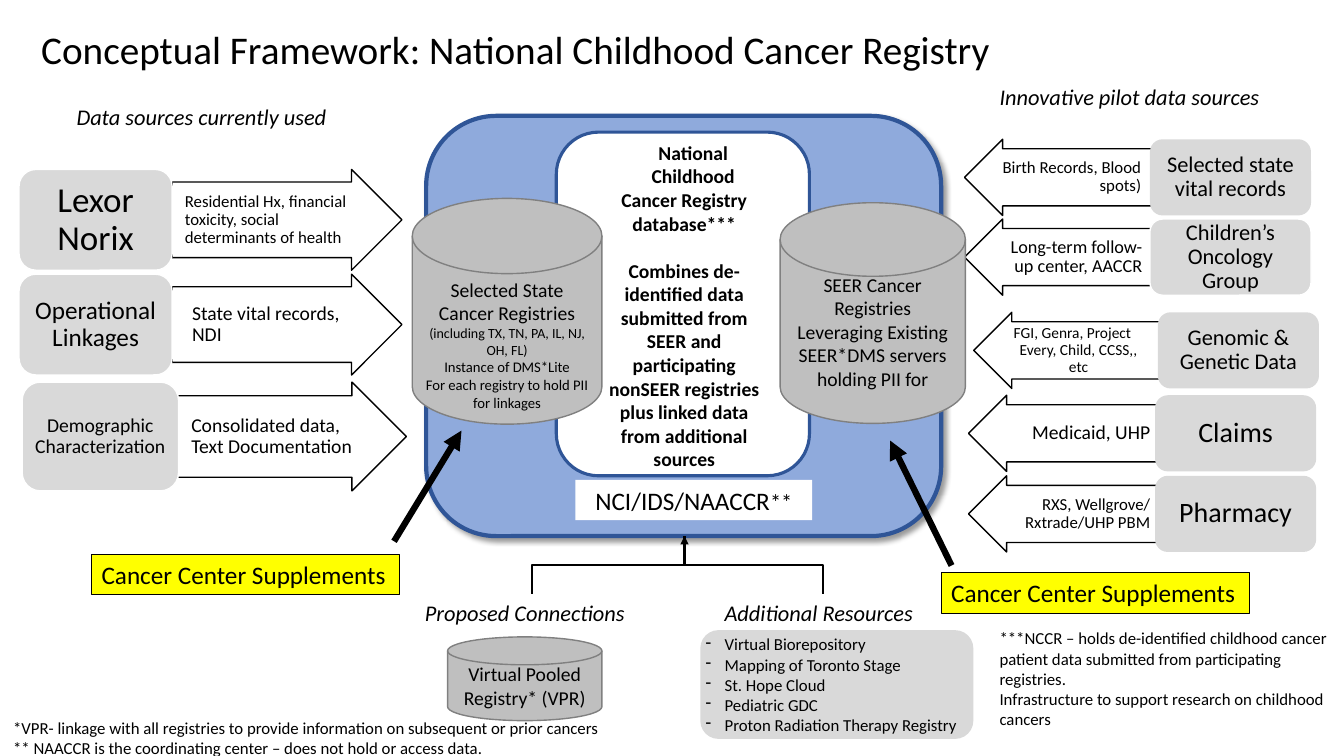
import lxml.etree
import pptx
import pptx.dml.color
import pptx.enum.shapes
import pptx.enum.text
import pptx.oxml.ns
import pptx.util

Cm, Pt = pptx.util.Cm, pptx.util.Pt
RGBColor = pptx.dml.color.RGBColor
SHAPE = pptx.enum.shapes.MSO_SHAPE
CONNECTOR = pptx.enum.shapes.MSO_CONNECTOR
ALIGN = pptx.enum.text.PP_ALIGN
ANCHOR = pptx.enum.text.MSO_ANCHOR
qn = pptx.oxml.ns.qn

BLACK = RGBColor(0x00, 0x00, 0x00)
WHITE = RGBColor(0xFF, 0xFF, 0xFF)
LIGHT_GREY = RGBColor(0xD9, 0xD9, 0xD9)
DISK_GREY = RGBColor(0xBF, 0xBF, 0xBF)
EDGE_GREY = RGBColor(0x80, 0x80, 0x80)
HUB_BLUE = RGBColor(0x8F, 0xAA, 0xDC)
EDGE_BLUE = RGBColor(0x2F, 0x55, 0x97)
YELLOW = RGBColor(0xFF, 0xFF, 0x00)

INSETS = (0.25, 0.13, 0.25, 0.13)

# Current sources: box left, box width, top, height, name, size, insets,
# arrow left, arrow width, detail, size, indent
CURRENT_SOURCES = [
    (0.48, 3.86, 4.27, 2.54, "Lexor Norix", 25, (0.35, 0.23), 4.34, 5.79,
     "Residential Hx, financial toxicity, social determinants of health", 12, 0.3),
    (0.48, 3.86, 6.91, 2.54, "Operational Linkages", 18, (0.28, 0.2), 4.34, 5.79,
     "State vital records, NDI", 14, 0.48),
    (0.56, 3.94, 9.63, 2.74, "Demographic Characterization", 14, (0.12, 0.12), 4.32, 5.92,
     "Consolidated data, Text Documentation", 14, 0.48),
]

# Pilot sources: box left, top, name, size, insets, box edge,
# arrow left, arrow width, detail, size, right inset, alignment
PILOT_SOURCES = [
    (28.98, 3.51, "Selected state vital records", 16, (0.28, 0.18), None,
     24.31, 4.7, "Birth Records, Blood spots)", 12, 0.25, ALIGN.RIGHT),
    (28.98, 5.52, "Children’s Oncology Group", 16, (0.28, 0.18), WHITE,
     24.31, 4.98, "Long-term follow-up center, AACCR", 13, 0.51, ALIGN.RIGHT),
    (29.18, 7.87, "Genomic & Genetic Data", 16, (0.1, 0.1), None,
     24.54, 5.26, "FGI, Genra, Project Every, Child, CCSS,, etc", 11, 1.02, ALIGN.CENTER),
    (29.11, 9.96, "Claims", 20, (0.1, 0.1), None,
     24.41, 6.1, "Medicaid, UHP", 14, 1.52, ALIGN.RIGHT),
    (29.11, 11.99, "Pharmacy", 20, (0.1, 0.1), None,
     24.41, 6.1, "RXS, Wellgrove/ Rxtrade/UHP PBM", 12, 1.52, ALIGN.RIGHT),
]
PILOT_WIDTH, PILOT_HEIGHT = 4.06, 1.92


def write(shape, lines, size, align=ALIGN.LEFT, anchor=ANCHOR.TOP, insets=INSETS,
          wrap=True, spacing=None, bold=None, italic=None):
    """Fill a shape with paragraphs; a line is a text or a (text, size) pair."""
    frame = shape.text_frame
    frame.word_wrap = wrap
    frame.vertical_anchor = anchor
    frame.margin_left, frame.margin_top, frame.margin_right, frame.margin_bottom = map(Cm, insets)
    for index, line in enumerate(lines):
        text, line_size = (line, size) if isinstance(line, str) else line
        paragraph = frame.paragraphs[0] if index == 0 else frame.add_paragraph()
        paragraph.add_run().text = text
        paragraph.alignment = align
        paragraph.line_spacing = spacing
        font = paragraph.font
        font.name, font.size, font.bold, font.italic = "Calibri", Pt(line_size), bold, italic
        font.color.rgb = BLACK
    return frame.paragraphs


def indent(paragraph, margin, first=0.0):
    properties = paragraph._p.get_or_add_pPr()
    properties.set("marL", str(Cm(margin)))
    properties.set("indent", str(Cm(first)))
    return properties


def add_panel(slide, kind, box, fill, edge=None, edge_width=1):
    panel = slide.shapes.add_shape(kind, *map(Cm, box))
    panel.shadow.inherit = False
    panel.fill.solid()
    panel.fill.fore_color.rgb = fill
    if edge is None:
        panel.line.fill.background()
    else:
        panel.line.color.rgb = edge
        panel.line.width = Pt(edge_width)
    return panel


def add_text(slide, box, lines, size, **style):
    return write(slide.shapes.add_textbox(*map(Cm, box)), lines, size, **style)


def add_disk(slide, box, lines, size, insets=INSETS):
    disk = add_panel(slide, SHAPE.FLOWCHART_MAGNETIC_DISK, box, DISK_GREY, EDGE_GREY)
    write(disk, lines, size, ALIGN.CENTER, ANCHOR.MIDDLE, insets)


def add_source_box(slide, box, name, size, insets, edge):
    source = add_panel(slide, SHAPE.ROUNDED_RECTANGLE, box, LIGHT_GREY, edge)
    write(source, [name], size, ALIGN.CENTER, ANCHOR.MIDDLE, insets * 2, spacing=0.9)


def add_block_arrow(slide, box, detail, size, align, right_inset, margin, first, to_left):
    left, top, width, height = box
    arrow = add_panel(slide, SHAPE.RIGHT_ARROW, box, WHITE, BLACK)
    arrow.adjustments[0], arrow.adjustments[1] = 0.75, 0.5
    head = 0.375 * height
    if to_left:
        arrow.element.spPr.find(qn("a:xfrm")).set("flipH", "1")
        left += head
    [paragraph] = add_text(slide, (left, top + height / 8, width - head, height * 0.75), [detail],
                           size, align=align, anchor=ANCHOR.MIDDLE,
                           insets=(0.02, 0.02, right_inset, 0.02), spacing=0.9)
    indent(paragraph, margin, first)


def add_line(slide, kind, start, end, width, arrowhead=None):
    line = slide.shapes.add_connector(kind, *map(Cm, start + end))
    line.line.color.rgb = BLACK
    line.line.width = Pt(width)
    if arrowhead:
        lxml.etree.SubElement(line.line._get_or_add_ln(), qn("a:" + arrowhead), type="triangle")
    lxml.etree.SubElement(line.element.spPr, qn("a:effectLst"))
    return line


def add_branch(slide, start, end, arrowhead=None):
    """Elbow that leaves and arrives vertically: a horizontal one, turned."""
    (x1, y1), (x2, y2) = start, end
    middle_x, middle_y = (x1 + x2) / 2, (y1 + y2) / 2
    half_w, half_h = abs(y2 - y1) / 2, abs(x2 - x1) / 2
    branch = add_line(slide, CONNECTOR.ELBOW, (middle_x - half_w, middle_y - half_h),
                      (middle_x + half_w, middle_y + half_h), 1.5, arrowhead)
    frame = branch.element.spPr.find(qn("a:xfrm"))
    frame.set("rot", str((270 if x2 > x1 else 90) * 60000))
    if x2 > x1:
        frame.set("flipH", "1")


def add_hub(slide):
    hub = add_panel(slide, SHAPE.ROUNDED_RECTANGLE, (10.74, 2.92, 12.98, 10.59),
                    HUB_BLUE, EDGE_BLUE, 3)
    effects = hub.element.spPr.find(qn("a:effectLst"))
    shadow = lxml.etree.SubElement(effects, qn("a:outerShdw"), blurRad=str(Pt(4)),
                                   dist=str(Pt(3)), dir=str(45 * 60000), algn="tl")
    tint = lxml.etree.SubElement(shadow, qn("a:srgbClr"), val=str(BLACK))
    lxml.etree.SubElement(tint, qn("a:alpha"), val="40000")
    add_panel(slide, SHAPE.ROUNDED_RECTANGLE, (14.02, 3.33, 6.38, 8.66), WHITE, EDGE_BLUE, 2.25)


def add_hub_content(slide):
    add_disk(slide, (19.66, 5.11, 4.67, 5.56),
             ["SEER Cancer Registries",
              "Leveraging Existing SEER*DMS servers holding PII for"], 14)
    add_disk(slide, (10.39, 5, 4.78, 5.69),
             ["Selected State Cancer Registries", ("(including TX, TN, PA, IL, NJ, OH, FL)", 10),
              "Instance of DMS*Lite", "For each registry to hold PII for linkages"][:1]
             + [("(including TX, TN, PA, IL, NJ, OH, FL)", 10), ("Instance of DMS*Lite", 10.5),
                ("For each registry to hold PII for linkages", 10.5)],
             14, (0.25, 0.85, 0.25, 0.13))
    coordinator = add_panel(slide, SHAPE.RECTANGLE, (14.5, 12.09, 5.97, 1.02), WHITE)
    [label] = write(coordinator, ["NCI/IDS/NAACCR"], 18, ALIGN.CENTER)
    marker = label.add_run()
    marker.text = "**"
    marker.font.size = Pt(16)
    database = add_text(slide, (14.91, 3.42, 4.67, 8.71),
                        ["National Childhood", "Cancer Registry", "database***",
                         "Combines de-identified data submitted from SEER and participating "
                         "nonSEER registries plus linked data from additional sources"],
                        14, align=ALIGN.CENTER, bold=True)
    indent(database[0], 0.45)
    database[3].space_before = Pt(17)


def main():
    presentation = pptx.Presentation()
    presentation.slide_width, presentation.slide_height = Cm(33.87), Cm(19.05)
    slide = presentation.slides.add_slide(presentation.slide_layouts[6])

    # Title and headings
    add_text(slide, (0.79, 0.64, 32.28, 2.29),
             ["Conceptual Framework: National Childhood Cancer Registry"], 28, spacing=0.9)
    for heading, box in [("Innovative pilot data sources", (24.94, 1.96, 8.2, 0.91)),
                         ("Data sources currently used", (1.68, 2.46, 7.24, 0.91)),
                         ("Proposed Connections", (10.46, 14.96, 5.89, 0.91)),
                         ("Additional Resources", (18.01, 14.96, 5.46, 0.91))]:
        add_text(slide, box, [heading], 16, italic=True)

    # Data sources on both sides of the hub
    add_hub(slide)
    for (left, width, top, height, name, size, insets,
         arrow_left, arrow_width, detail, detail_size, margin) in CURRENT_SOURCES:
        add_block_arrow(slide, (arrow_left, top, arrow_width, height), detail, detail_size,
                        ALIGN.LEFT, 0.02, margin, 0, False)
        add_source_box(slide, (left, top, width, height), name, size, insets, WHITE)
    for (left, top, name, size, insets, edge,
         arrow_left, arrow_width, detail, detail_size, right_inset, align) in PILOT_SOURCES:
        add_block_arrow(slide, (arrow_left, top, arrow_width, PILOT_HEIGHT), detail, detail_size,
                        align, right_inset, 0.3, -0.3, True)
        add_source_box(slide, (left, top, PILOT_WIDTH, PILOT_HEIGHT), name, size, insets, edge)
    add_hub_content(slide)

    # Connections and resources below the hub
    add_disk(slide, (11.28, 16.05, 3.89, 2.11), ["Virtual Pooled Registry* (VPR)"], 14)
    resources = add_panel(slide, SHAPE.ROUNDED_RECTANGLE, (17.65, 15.88, 6.88, 2.74), LIGHT_GREY)
    for item in write(resources, ["Virtual Biorepository", "Mapping of Toronto Stage",
                                  "St. Hope Cloud", "Pediatric GDC",
                                  "Proton Radiation Therapy Registry"],
                      12, anchor=ANCHOR.MIDDLE, insets=(0, 0, 0, 0)):
        bullet = lxml.etree.Element(qn("a:buChar"), char="-")
        indent(item, 0.48, -0.48).find(qn("a:defRPr")).addprevious(bullet)
    hub_bottom = (17.25, 13.51)
    add_branch(slide, hub_bottom, (20.75, 14.96), "headEnd")
    add_branch(slide, hub_bottom, (13.41, 14.96))

    # Supplements and their arrows
    for left, top, start, end in [(2.31, 13.97, (9.93, 13.64), (11.63, 10.85)),
                                  (23.72, 14.43, (23.98, 14.25), (22.43, 11.1))]:
        supplement = add_panel(slide, SHAPE.RECTANGLE, (left, top, 7.77, 1.02), YELLOW, BLACK, 0.75)
        write(supplement, ["Cancer Center Supplements"], 18, wrap=False)
        add_line(slide, CONNECTOR.STRAIGHT, start, end, 4.5, "tailEnd")

    # Footnotes
    add_text(slide, (0.08, 17.96, 24.1, 1.27),
             ["*VPR- linkage with all registries to provide information on subsequent or prior cancers",
              "** NAACCR is the coordinating center – does not hold or access data."], 12)
    add_text(slide, (24.94, 15.7, 9.32, 2.82),
             ["***NCCR – holds de-identified childhood cancer",
              "patient data submitted from participating registries.",
              "Infrastructure to support research on childhood cancers"], 12)

    presentation.save("out.pptx")


if __name__ == "__main__":
    main()
